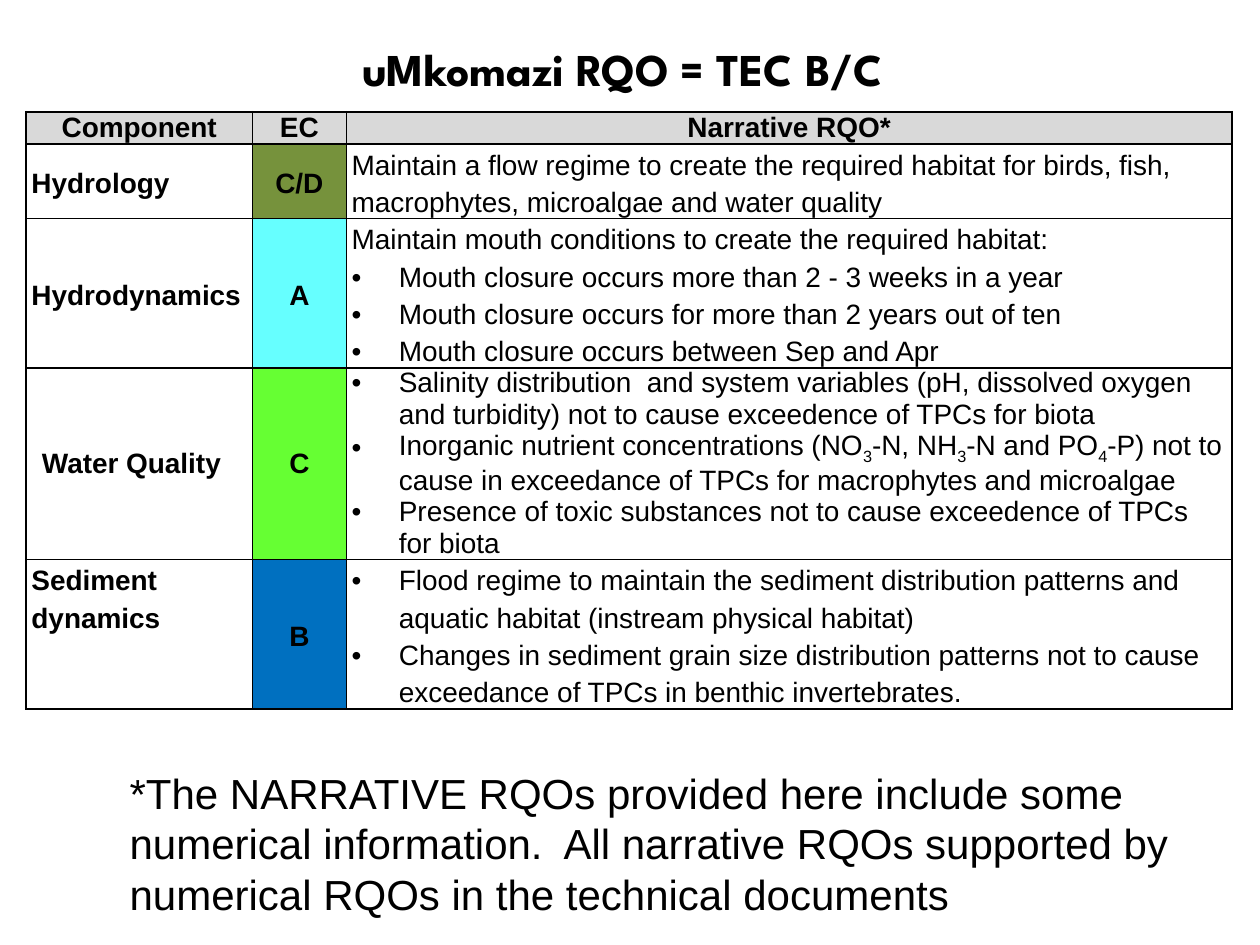
from lxml.etree import SubElement
from pptx import Presentation
from pptx.dml.color import RGBColor
from pptx.enum.shapes import MSO_SHAPE
from pptx.enum.text import MSO_ANCHOR, PP_ALIGN
from pptx.oxml.ns import qn
from pptx.util import Pt

COLORS = {
    "black": "000000",
    "white": "FFFFFF",
    "header": "D9D9D9",
    "C/D": "76923C",
    "A": "66FFFF",
    "C": "66FF33",
    "B": "0070C0",
}
COLUMN_WIDTHS = [129.2, 53.8, 506]
ROW_HEIGHTS = [18.2, 42.5, 85.1, 109.6, 85.1]
HEADERS = ["Component", "EC", "Narrative RQO*"]
SUBSCRIPT = "~"
BULLET = "• "
COMPONENTS = [
    ("Hydrology", "C/D", 1.2, [
        "Maintain a flow regime to create the required habitat for birds, fish, "
        "macrophytes, microalgae and water quality",
    ]),
    ("Hydrodynamics", "A", 1.2, [
        "Maintain mouth conditions to create the required habitat:",
        "• Mouth closure occurs more than 2 - 3 weeks in a year",
        "• Mouth closure occurs for more than 2 years out of ten",
        "• Mouth closure occurs between Sep and Apr",
    ]),
    ("Water Quality", "C", 1, [
        "• Salinity distribution  and system variables (pH, dissolved oxygen "
        "and turbidity) not to cause exceedence of TPCs for biota",
        "• Inorganic nutrient concentrations (NO~3~-N, NH~3~-N and PO~4~-P) not to "
        "cause in exceedance of TPCs for macrophytes and microalgae",
        "• Presence of toxic substances not to cause exceedence of TPCs for biota",
    ]),
    ("Sediment dynamics", "B", 1.2, [
        "• Flood regime to maintain the sediment distribution patterns and "
        "aquatic habitat (instream physical habitat)",
        "• Changes in sediment grain size distribution patterns not to cause "
        "exceedance of TPCs in benthic invertebrates.",
    ]),
]


class SlideBuilder:
    """Holds the text style and the current slide, and adds its elements."""

    def __init__(self, slide, font="Arial", title_font="League Spartan"):
        self.slide = slide
        self.font = font
        self.title_font = title_font

    def color(self, name):
        return RGBColor.from_string(COLORS[name])

    def format_runs(self, paragraph, size, bold=False, font=None):
        for run in paragraph.runs:
            run.font.name = font or self.font
            run.font.size = Pt(size)
            run.font.bold = bold
            run.font.color.rgb = self.color("black")

    def add_title(self, text, left, top, width, height):
        frame = self.slide.shapes.add_textbox(Pt(left), Pt(top), Pt(width), Pt(height)).text_frame
        frame.word_wrap = True
        frame.vertical_anchor = MSO_ANCHOR.MIDDLE
        frame.text = text
        frame.paragraphs[0].alignment = PP_ALIGN.CENTER
        self.format_runs(frame.paragraphs[0], 26, True, self.title_font)

    def add_note(self, text, left, top, width, height):
        shape = self.slide.shapes.add_shape(
            MSO_SHAPE.RECTANGLE, Pt(left), Pt(top), Pt(width), Pt(height))
        shape.shadow.inherit = False
        shape.fill.solid()
        shape.fill.fore_color.rgb = self.color("white")
        shape.line.fill.background()
        frame = shape.text_frame
        frame.word_wrap = True
        frame.vertical_anchor = MSO_ANCHOR.TOP
        frame.text = text
        frame.paragraphs[0].alignment = PP_ALIGN.LEFT
        self.format_runs(frame.paragraphs[0], 24)

    def add_table(self, left, top, widths, heights):
        table = self.slide.shapes.add_table(
            len(heights), len(widths), Pt(left), Pt(top),
            Pt(sum(widths)), Pt(sum(heights))).table
        table.horz_banding = False
        for column, width in zip(table.columns, widths):
            column.width = Pt(width)
        for row, height in zip(table.rows, heights):
            row.height = Pt(height)
        return table

    def add_borders(self, cell, widths):
        properties = cell._tc.get_or_add_tcPr()
        for side, width in zip("LRTB", widths):
            line = SubElement(properties, qn(f"a:ln{side}"), w=str(Pt(width)))
            fill = SubElement(line, qn("a:solidFill"))
            SubElement(fill, qn("a:srgbClr"), val=COLORS["black"])

    def add_bullet(self, paragraph, indent):
        properties = paragraph._p.get_or_add_pPr()
        properties.set("marL", str(Pt(indent)))
        properties.set("indent", str(-Pt(indent)))
        SubElement(properties, qn("a:buFont"), typeface=self.font)
        SubElement(properties, qn("a:buChar"), char=BULLET.strip())

    def fill_paragraph(self, paragraph, text, bold, centered, spacing):
        paragraph.alignment = PP_ALIGN.CENTER if centered else PP_ALIGN.LEFT
        paragraph.line_spacing = spacing
        if text.startswith(BULLET):
            self.add_bullet(paragraph, 27)
        for index, part in enumerate(text.removeprefix(BULLET).split(SUBSCRIPT)):
            run = paragraph.add_run()
            run.text = part
            if index % 2:
                run._r.get_or_add_rPr().set("baseline", "-25000")
        self.format_runs(paragraph, 16, bold)

    def fill_cell(self, cell, lines, fill, borders, bold=True, centered=False,
                  spacing=1, anchor=MSO_ANCHOR.MIDDLE, indent=0):
        self.add_borders(cell, borders)
        cell.fill.solid()
        cell.fill.fore_color.rgb = self.color(fill)
        cell.margin_left = Pt(3 + indent)
        cell.margin_right = Pt(3)
        cell.margin_top = cell.margin_bottom = Pt(0)
        cell.vertical_anchor = anchor
        frame = cell.text_frame
        for index, text in enumerate(lines):
            paragraph = frame.add_paragraph() if index else frame.paragraphs[0]
            self.fill_paragraph(paragraph, text, bold, centered, spacing)


def main():
    presentation = Presentation()
    presentation.slide_width, presentation.slide_height = Pt(720), Pt(540)
    builder = SlideBuilder(presentation.slides.add_slide(presentation.slide_layouts[6]))

    table = builder.add_table(15, 64, COLUMN_WIDTHS, ROW_HEIGHTS)
    outer, inner = 1.5, 1
    for column, header in enumerate(HEADERS):
        borders = (inner if column else outer, outer if column == 2 else inner, outer, inner)
        builder.fill_cell(table.cell(0, column), [header], "header", borders, centered=True)
    for row, (component, category, spacing, narrative) in enumerate(COMPONENTS, start=1):
        name_anchor = MSO_ANCHOR.TOP if component == "Sediment dynamics" else MSO_ANCHOR.MIDDLE
        builder.fill_cell(table.cell(row, 0), [component], "white",
                          (outer, inner, inner, inner), spacing=spacing, anchor=name_anchor,
                          indent=6 if component == "Water Quality" else 0)
        builder.fill_cell(table.cell(row, 1), [category], category,
                          (inner, inner, inner, inner), centered=True, spacing=spacing)
        builder.fill_cell(table.cell(row, 2), narrative, "white",
                          (inner, outer, inner, inner), bold=False, spacing=spacing,
                          anchor=MSO_ANCHOR.TOP)

    builder.add_title("uMkomazi RQO = TEC B/C ", 21.6, 10, 675.4, 58.3)
    builder.add_note(
        "*The NARRATIVE RQOs provided here include some numerical information.  "
        "All narrative RQOs supported by numerical RQOs in the technical documents",
        67, 435, 616.3, 94.3)
    presentation.save("out.pptx")


if __name__ == "__main__":
    main()
